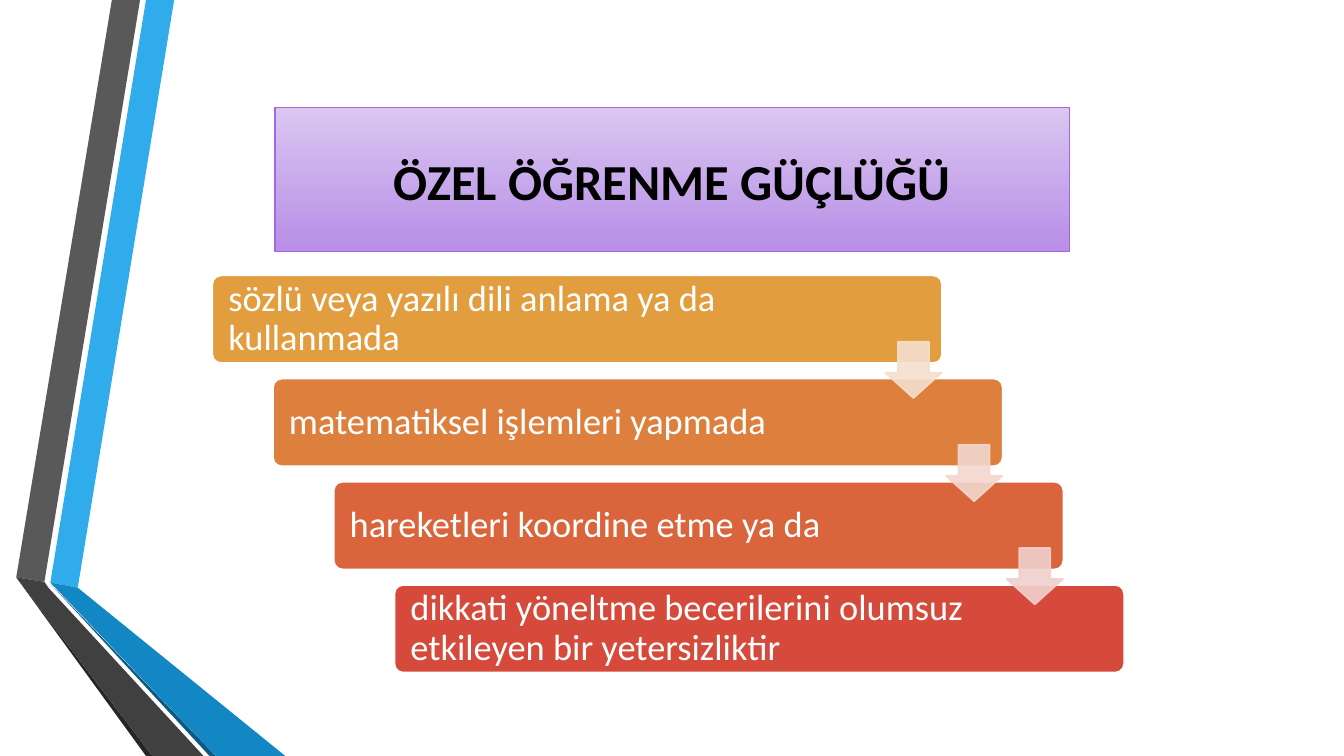
from pptx import Presentation
from pptx import util as u
from pptx.dml.color import RGBColor
from pptx.enum import shapes, text
from pptx.oxml import ns
from lxml import etree

WHITE = RGBColor(0xFF, 0xFF, 0xFF)
BLACK = RGBColor(0, 0, 0)
LILAC = RGBColor(0xD9, 0xC6, 0xF1)
PURPLE = RGBColor(0xB8, 0x8E, 0xE6)
VIOLET = RGBColor(0xA6, 0x66, 0xE1)
SKY = RGBColor(0x30, 0xAC, 0xEC)
BLUE = RGBColor(0x12, 0x87, 0xC3)
NAVY = RGBColor(0x0C, 0x5A, 0x82)
GREY = RGBColor(0x59, 0x59, 0x59)
CHARCOAL = RGBColor(0x40, 0x40, 0x40)
SOOT = RGBColor(0x26, 0x26, 0x26)

RIBBONS = [
    (SKY, [(1.27, 14.68), (1.96, 14.81), (4.39, 0), (3.68, 0)]),
    (GREY, [(3.53, 0), (2.82, 0), (0.41, 14.55), (1.12, 14.66)]),
    (SOOT, [(0.41, 14.55), (3.68, 19.05), (3.84, 19.05)]),
    (NAVY, [(1.27, 14.71), (5.28, 19.05), (5.44, 19.05)]),
    (BLUE, [(1.27, 14.68), (5.44, 19.05), (7.19, 19.05), (1.96, 14.81)]),
    (CHARCOAL, [(5.13, 19.05), (1.22, 14.81), (1.12, 14.66), (0.41, 14.55), (3.84, 19.05)]),
]
STEPS = [
    ("sözlü veya yazılı dili anlama ya da kullanmada", RGBColor(0xE2, 0x9D, 0x3E)),
    ("matematiksel işlemleri yapmada", RGBColor(0xDE, 0x80, 0x3D)),
    ("hareketleri koordine etme ya da", RGBColor(0xDA, 0x65, 0x3C)),
    ("dikkati yöneltme becerilerini olumsuz etkileyen bir yetersizliktir", RGBColor(0xD6, 0x4A, 0x3B)),
]
ARROW_COLORS = [
    RGBColor(0xF4, 0xDF, 0xCE),
    RGBColor(0xF2, 0xD7, 0xCE),
    RGBColor(0xF0, 0xD0, 0xCE),
]
STEP_X, STEP_Y = 1.53, 2.6


def write(frame, words, size, color, bold=False, align=text.PP_ALIGN.LEFT, spacing=1.0):
    frame.word_wrap = True
    frame.auto_size = text.MSO_AUTO_SIZE.NONE
    frame.vertical_anchor = text.MSO_ANCHOR.MIDDLE
    para = frame.paragraphs[0]
    para.alignment = align
    para.line_spacing = spacing
    span = para.add_run()
    span.text = words
    span.font.name = "Calibri"
    span.font.size = u.Pt(size)
    span.font.bold = bold
    span.font.color.rgb = color


def set_alpha(shape, percent):
    for color in shape.element.spPr.iter(ns.qn("a:srgbClr")):
        etree.SubElement(color, ns.qn("a:alpha"), val=str(percent * 1000))


class SlideBuilder:
    def __init__(self, page):
        self.page = page

    def paint(self, shape, fill, line=None, width=1.25):
        shape.shadow.inherit = False
        shape.fill.solid()
        shape.fill.fore_color.rgb = fill
        if line is None:
            shape.line.fill.background()
        else:
            shape.line.color.rgb = line
            shape.line.width = u.Pt(width)

    def title(self, words, left, top, width, height):
        box = self.page.shapes.title
        box.left, box.top, box.width, box.height = map(u.Cm, (left, top, width, height))
        box.fill.gradient()
        box.fill.gradient_angle = 270
        for stop, color in zip(box.fill.gradient_stops, (LILAC, PURPLE)):
            stop.color.rgb = color
        box.line.color.rgb = VIOLET
        box.line.width = u.Pt(0.75)
        write(box.text_frame, words, 36, BLACK, bold=True, align=text.PP_ALIGN.CENTER)

    def ribbon(self, color, points):
        corners = [(u.Cm(x), u.Cm(y)) for x, y in points]
        builder = self.page.shapes.build_freeform(*corners[0])
        builder.add_line_segments(corners[1:], close=True)
        self.paint(builder.convert_to_shape(), color)

    def bar(self, words, color, left, top):
        box = self.page.shapes.add_shape(
            shapes.MSO_SHAPE.ROUNDED_RECTANGLE, u.Cm(left), u.Cm(top), u.Cm(18.39), u.Cm(2.21))
        box.adjustments[0] = 0.1
        self.paint(box, color, WHITE)
        frame = box.text_frame
        frame.margin_left, frame.margin_right = u.Cm(0.34), u.Cm(3.2)
        frame.margin_top = frame.margin_bottom = u.Cm(0.28)
        write(frame, words, 26, WHITE, spacing=0.9)

    def arrow(self, color, left, top):
        arrow = self.page.shapes.add_shape(
            shapes.MSO_SHAPE.DOWN_ARROW, u.Cm(left), u.Cm(top), u.Cm(1.42), u.Cm(1.42))
        arrow.adjustments[0] = 0.55
        arrow.adjustments[1] = 0.45
        self.paint(arrow, color, color)
        set_alpha(arrow, 90)


def main():
    deck = Presentation()
    deck.slide_width, deck.slide_height = u.Cm(33.87), u.Cm(19.05)
    slide = SlideBuilder(deck.slides.add_slide(deck.slide_layouts[5]))
    for color, points in RIBBONS:
        slide.ribbon(color, points)
    slide.title("ÖZEL ÖĞRENME GÜÇLÜĞÜ", 6.93, 2.72, 20.02, 3.63)
    for index, (words, color) in enumerate(STEPS):
        slide.bar(words, color, 5.35 + index * STEP_X, 6.94 + index * STEP_Y)
    for index, color in enumerate(ARROW_COLORS):
        slide.arrow(color, 22.31 + index * STEP_X, 8.61 + index * STEP_Y)
    deck.save("out.pptx")


if __name__ == "__main__":
    main()
